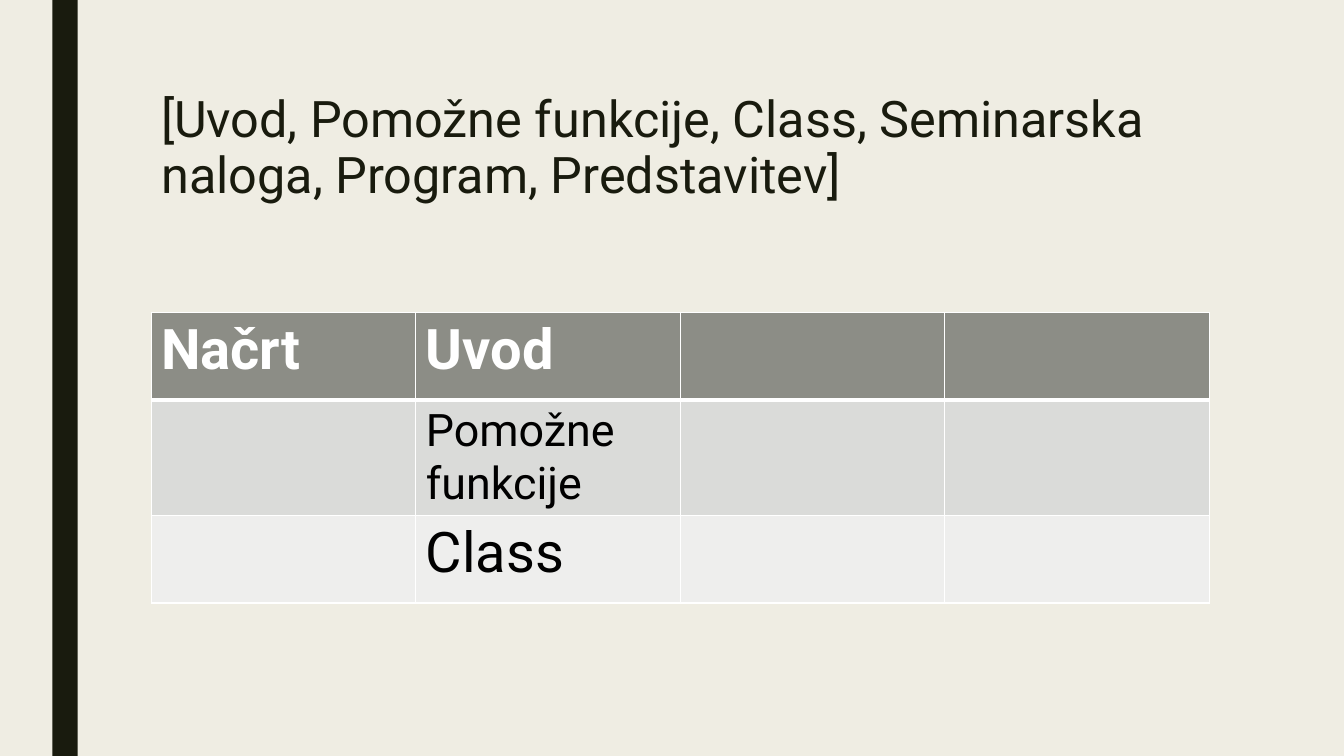
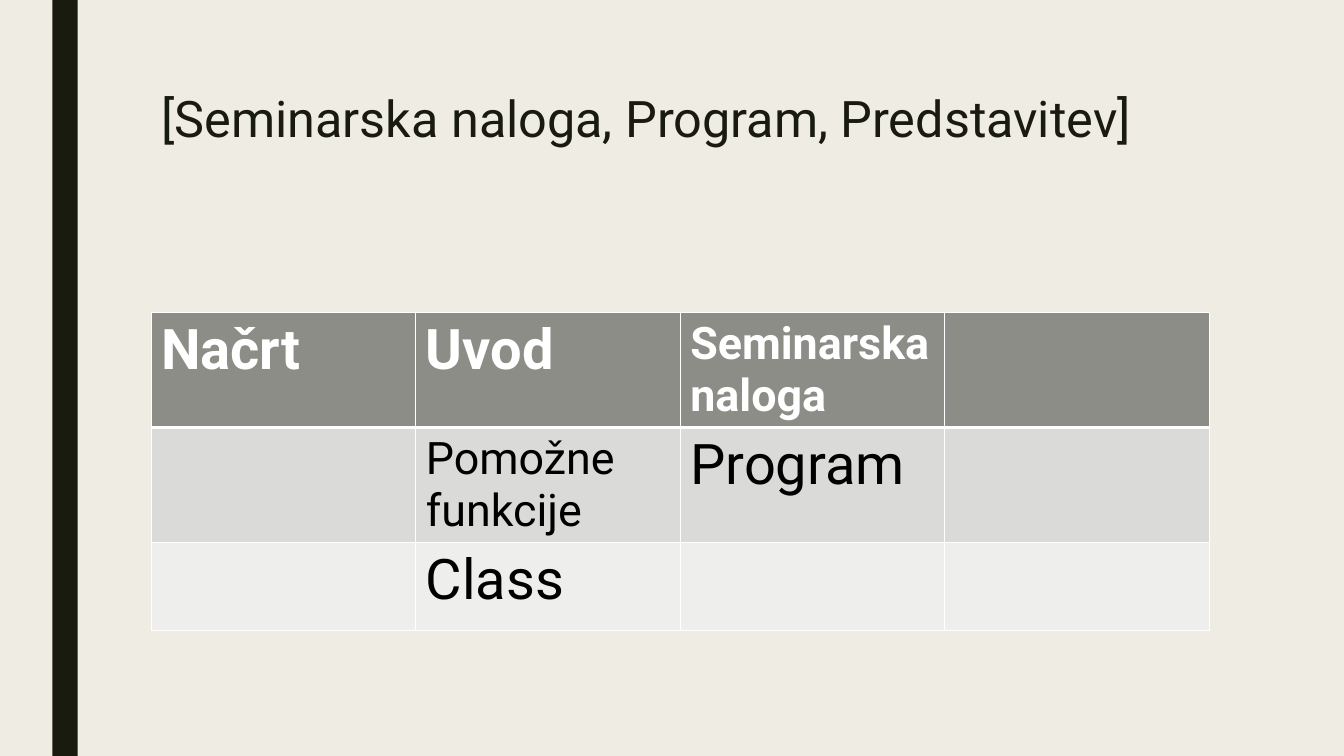
from dataclasses import dataclass

from lxml import etree
from pptx import Presentation
from pptx.dml.color import RGBColor
from pptx.enum.shapes import MSO_SHAPE
from pptx.enum.text import MSO_AUTO_SIZE
from pptx.oxml.ns import qn
from pptx.slide import Slide
from pptx.table import _Cell as Cell
from pptx.text.text import _Paragraph as Para
from pptx.util import Cm, Pt

RECT = MSO_SHAPE.RECTANGLE
NO_FIT = MSO_AUTO_SIZE.NONE

FONT = "Roboto"
PAPER = "EFEDE3"
INK = "191B0E"
WHITE = "FFFFFF"
BLACK = "000000"
FILLS = ("8C8D86", "DADBD9", "EEEEED")

WIDE, HIGH = Cm(33.87), Cm(19.05)
LEFT, SPAN = Cm(3.81), Cm(26.67)
ROW = Cm(2.21)
THIN, THICK = Pt(1), Pt(3)


@dataclass(frozen=True)
class Page:
    queue: str
    rows: tuple[tuple[str, ...], ...]


PAGES = (
    Page(
        "[Uvod, Pomožne funkcije, Class, Seminarska naloga, Program, Predstavitev]",
        (
            ("Načrt", "Uvod", "", ""),
            ("", "Pomožne funkcije", "", ""),
            ("", "Class", "", ""),
        ),
    ),
    Page(
        "[Seminarska naloga, Program, Predstavitev]",
        (
            ("Načrt", "Uvod", "Seminarska naloga", ""),
            ("", "Pomožne funkcije", "Program", ""),
            ("", "Class", "", ""),
        ),
    ),
)


def color(code: str) -> RGBColor:
    return RGBColor.from_string(code)


def style(para: Para, size: int, code: str, bold: bool = False) -> None:
    font = para.font
    font.name, font.size, font.bold = FONT, Pt(size), bold
    font.color.rgb = color(code)


def add_band(slide: Slide) -> None:
    master = slide.slide_layout.slide_master
    back = master.background.fill
    back.solid()
    back.fore_color.rgb = color(PAPER)
    band = slide.shapes.add_shape(RECT, Cm(1.32), 0, Cm(0.64), HIGH)
    band.shadow.inherit = False
    band.fill.solid()
    band.fill.fore_color.rgb = color(INK)
    band.line.fill.background()
    master.shapes[0].element.addprevious(band.element)


def add_queue(slide: Slide, text: str) -> None:
    title = slide.shapes.title.element
    title.getparent().remove(title)
    body = slide.placeholders[1]
    body.left, body.top, body.width, body.height = LEFT, Cm(2.18), SPAN, Cm(14.12)
    frame = body.text_frame
    frame.text = text
    frame.auto_size = NO_FIT
    para = frame.paragraphs[0]
    para.line_spacing = 0.94
    para.space_before, para.space_after = Pt(10), Pt(2)
    style(para, 36, INK)
    props = para._p.get_or_add_pPr()
    props.set("marL", "0")
    props.set("indent", "0")
    etree.SubElement(props, qn("a:buNone"))
    props.append(props.find(qn("a:defRPr")))


def add_edges(cell: Cell, top: int, base: int) -> None:
    props = cell._tc.get_or_add_tcPr()
    for side, width in (("L", THIN), ("R", THIN), ("T", top), ("B", base)):
        line = etree.SubElement(props, qn(f"a:ln{side}"), w=str(int(width)))
        fill = etree.SubElement(line, qn("a:solidFill"))
        etree.SubElement(fill, qn("a:srgbClr"), val=WHITE)


def add_grid(slide: Slide, rows: tuple[tuple[str, ...], ...]) -> None:
    count = len(rows)
    frame = slide.shapes.add_table(
        count, len(rows[0]), LEFT, Cm(7.87), SPAN, ROW * count
    )
    grid = frame.table
    for y, texts in enumerate(rows):
        head = y == 0
        for x, text in enumerate(texts):
            cell = grid.cell(y, x)
            add_edges(cell, THICK if y == 1 else THIN, THICK if head else THIN)
            cell.fill.solid()
            cell.fill.fore_color.rgb = color(FILLS[y])
            if text:
                cell.text = text
                size = 32 if " " in text else 40
                style(cell.text_frame.paragraphs[0], size, WHITE if head else BLACK, head)


def main() -> None:
    deck = Presentation()
    deck.slide_width, deck.slide_height = WIDE, HIGH
    for index, page in enumerate(PAGES):
        slide = deck.slides.add_slide(deck.slide_layouts[1])
        if index == 0:
            add_band(slide)
        add_queue(slide, page.queue)
        add_grid(slide, page.rows)
    deck.save("out.pptx")


if __name__ == "__main__":
    main()
